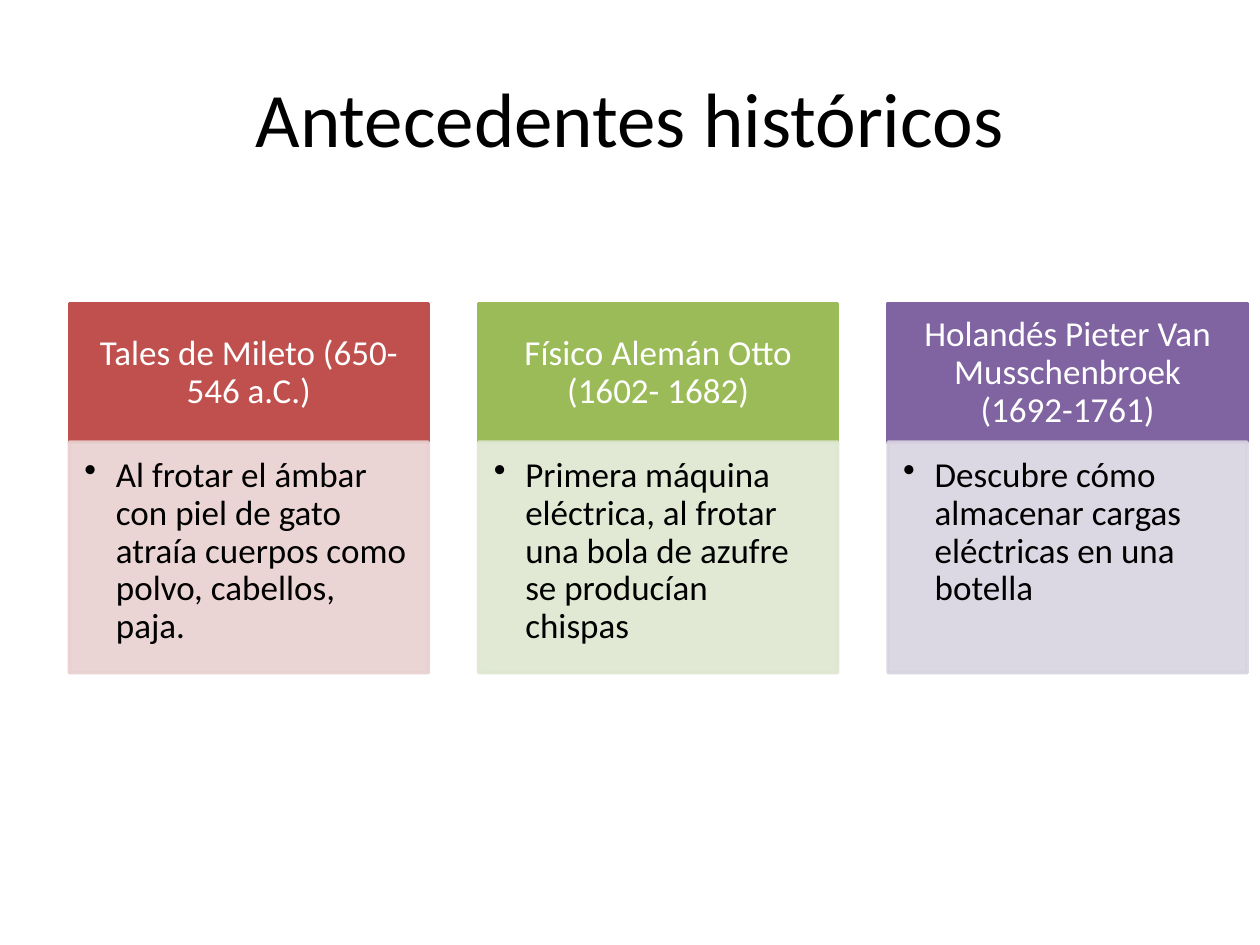
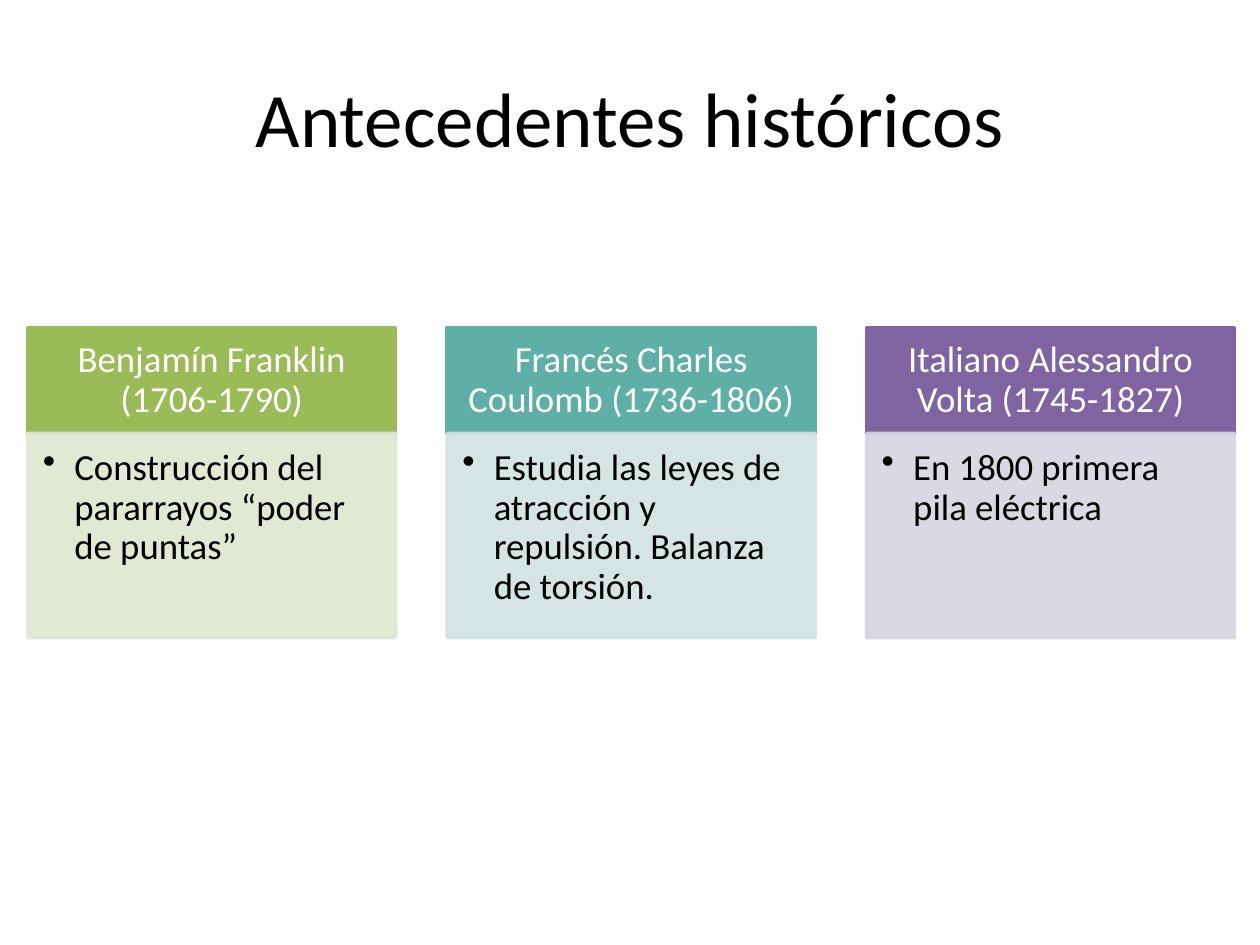
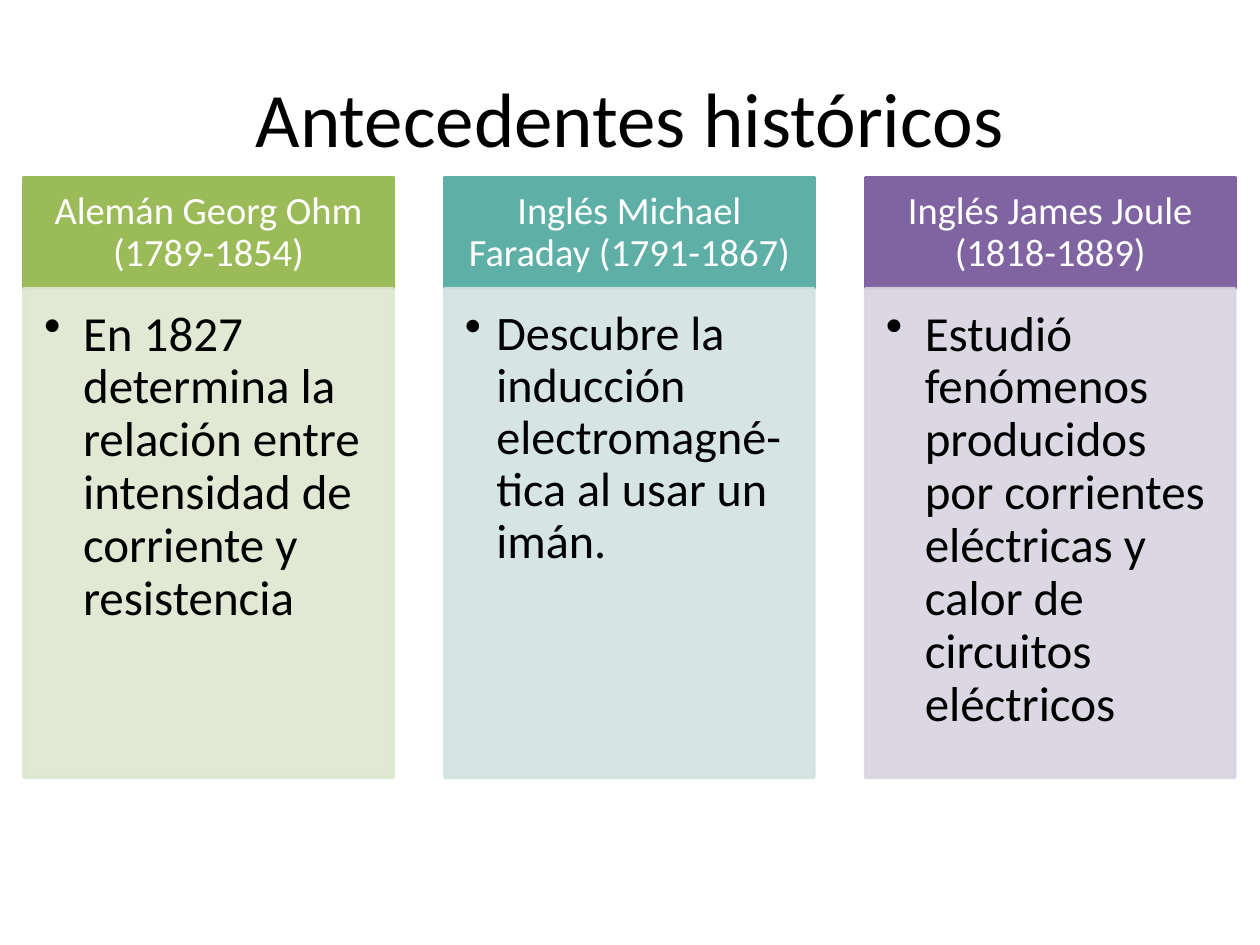
from dataclasses import dataclass

import lxml.etree
import pptx
import pptx.dml.color
import pptx.enum.shapes
import pptx.enum.text
import pptx.oxml.ns
import pptx.presentation
import pptx.shapes.autoshape
import pptx.slide
import pptx.text.text
import pptx.util
from pptx.dml.color import RGBColor
from pptx.enum.text import MSO_ANCHOR, PP_ALIGN
from pptx.util import Inches

FONT = "Calibri"
TITLE = "Antecedentes históricos"
BLACK = RGBColor(0x00, 0x00, 0x00)
WHITE = RGBColor(0xFF, 0xFF, 0xFF)
RED = RGBColor(0xC0, 0x50, 0x4D)
GREEN = RGBColor(0x9B, 0xBB, 0x59)
TEAL = RGBColor(0x5E, 0xAF, 0xA6)
PURPLE = RGBColor(0x80, 0x64, 0xA2)
TINTS = {
    RED: RGBColor(0xE8, 0xD0, 0xD0),
    GREEN: RGBColor(0xDE, 0xE7, 0xD1),
    TEAL: RGBColor(0xD2, 0xE3, 0xE2),
    PURPLE: RGBColor(0xD8, 0xD3, 0xE0),
}
PANEL_OPACITY = 90  # percent
COLUMN_PITCH = 1.14  # step between columns, in column widths

Insets = tuple[float, float, float, float]


@dataclass(frozen=True)
class Scientist:
    name: str
    finding: str
    color: RGBColor
    size: float
    indent: float = 0.25


@dataclass(frozen=True)
class ColumnSet:
    left: float
    top: float
    width: float
    header_height: float
    panel_height: float
    header_size: float
    header_insets: Insets
    panel_insets: Insets
    scientists: tuple[Scientist, ...]


COLUMN_SETS = (
    ColumnSet(
        0.55, 2.41, 2.85, 1.1, 1.83, 20,
        (0.16, 0.09, 0.16, 0.09), (0.12, 0.12, 0.16, 0.17),
        (
            Scientist("Tales de Mileto (650-546 a.C.)",
                      "Al frotar el ámbar con piel de gato atraía cuerpos como polvo, cabellos, paja.",
                      RED, 20),
            Scientist("Físico Alemán Otto (1602- 1682)",
                      "Primera máquina eléctrica, al frotar una bola de azufre se producían chispas",
                      GREEN, 20),
            Scientist("Holandés Pieter Van Musschenbroek (1692-1761)",
                      "Descubre cómo almacenar cargas eléctricas en una botella",
                      PURPLE, 20),
        ),
    ),
    ColumnSet(
        0.22, 2.6, 2.92, 0.84, 1.62, 21,
        (0.16, 0.09, 0.16, 0.09), (0.12, 0.12, 0.16, 0.18),
        (
            Scientist("Benjamín Franklin (1706-1790)",
                      "Construcción del pararrayos “poder de puntas”", GREEN, 21),
            Scientist("Francés Charles Coulomb (1736-1806)",
                      "Estudia las leyes de atracción y repulsión. Balanza de torsión.",
                      TEAL, 21),
            Scientist("Italiano Alessandro Volta (1745-1827)",
                      "En 1800 primera pila eléctrica", PURPLE, 21),
        ),
    ),
    ColumnSet(
        0.19, 1.41, 2.93, 0.88, 3.88, 22,
        (0.17, 0.1, 0.17, 0.1), (0.16, 0.16, 0.22, 0.24),
        (
            Scientist("Alemán Georg Ohm (1789-1854)",
                      "En 1827 determina la relación entre intensidad de corriente y resistencia",
                      GREEN, 28, 0.31),
            Scientist("Inglés Michael Faraday (1791-1867)",
                      "Descubre la inducción electromagné-tica al usar un imán.",
                      TEAL, 27.5),
            Scientist("Inglés James Joule (1818-1889)",
                      "Estudió fenómenos producidos por corrientes eléctricas y calor de circuitos eléctricos",
                      PURPLE, 28, 0.31),
        ),
    ),
)


def add_run(paragraph: pptx.text.text._Paragraph, text: str, size: float, color: RGBColor) -> None:
    run = paragraph.add_run()
    run.text = text
    run.font.name = FONT
    run.font.size = pptx.util.Pt(size)
    run.font.color.rgb = color


def add_title(slide: pptx.slide.Slide) -> None:
    frame = slide.shapes.add_textbox(Inches(0.5), Inches(0.3), Inches(9), Inches(1.25)).text_frame
    frame.word_wrap = True
    frame.vertical_anchor = MSO_ANCHOR.MIDDLE
    paragraph = frame.paragraphs[0]
    paragraph.alignment = PP_ALIGN.CENTER
    add_run(paragraph, TITLE, 44, BLACK)


def add_block(slide: pptx.slide.Slide, left: float, top: float, width: float, height: float,
              color: RGBColor, insets: Insets) -> pptx.shapes.autoshape.Shape:
    """Draw a filled rectangle ready to hold one paragraph."""
    shape = slide.shapes.add_shape(
        pptx.enum.shapes.MSO_SHAPE.RECTANGLE,
        Inches(left), Inches(top), Inches(width), Inches(height))
    shape.shadow.inherit = False
    shape.fill.solid()
    shape.fill.fore_color.rgb = color
    shape.line.color.rgb = color
    shape.line.width = pptx.util.Pt(2)
    frame = shape.text_frame
    frame.word_wrap = True
    frame.margin_left, frame.margin_top, frame.margin_right, frame.margin_bottom = map(Inches, insets)
    frame.paragraphs[0].line_spacing = 0.9
    return shape


def make_translucent(shape: pptx.shapes.autoshape.Shape) -> None:
    """Apply the panel opacity to both fill and outline."""
    for color in shape._element.spPr.iter(pptx.oxml.ns.qn("a:srgbClr")):
        alpha = lxml.etree.SubElement(color, pptx.oxml.ns.qn("a:alpha"))
        alpha.set("val", str(PANEL_OPACITY * 1000))


def add_bullet(paragraph: pptx.text.text._Paragraph, indent: float) -> None:
    properties = paragraph._p.get_or_add_pPr()
    properties.set("marL", str(Inches(indent)))
    properties.set("indent", str(-Inches(indent)))
    lxml.etree.SubElement(properties, pptx.oxml.ns.qn("a:buChar")).set("char", "•")


def add_column(slide: pptx.slide.Slide, columns: ColumnSet, left: float, scientist: Scientist) -> None:
    # Header with name and dates
    header = add_block(slide, left, columns.top, columns.width, columns.header_height,
                       scientist.color, columns.header_insets)
    header.text_frame.vertical_anchor = MSO_ANCHOR.MIDDLE
    paragraph = header.text_frame.paragraphs[0]
    paragraph.alignment = PP_ALIGN.CENTER
    add_run(paragraph, scientist.name, columns.header_size, WHITE)

    # Panel with the finding
    panel = add_block(slide, left, columns.top + columns.header_height, columns.width,
                      columns.panel_height, TINTS[scientist.color], columns.panel_insets)
    make_translucent(panel)
    panel.text_frame.vertical_anchor = MSO_ANCHOR.TOP
    paragraph = panel.text_frame.paragraphs[0]
    paragraph.alignment = PP_ALIGN.LEFT
    add_bullet(paragraph, scientist.indent)
    add_run(paragraph, scientist.finding, scientist.size, BLACK)


def add_history_slide(presentation: pptx.presentation.Presentation, columns: ColumnSet) -> None:
    slide = presentation.slides.add_slide(presentation.slide_layouts[6])
    add_title(slide)
    for index, scientist in enumerate(columns.scientists):
        left = columns.left + index * columns.width * COLUMN_PITCH
        add_column(slide, columns, left, scientist)


def main() -> None:
    presentation = pptx.Presentation()
    presentation.slide_width = Inches(10)
    presentation.slide_height = Inches(7.5)
    for columns in COLUMN_SETS:
        add_history_slide(presentation, columns)
    presentation.save("out.pptx")


if __name__ == "__main__":
    main()
